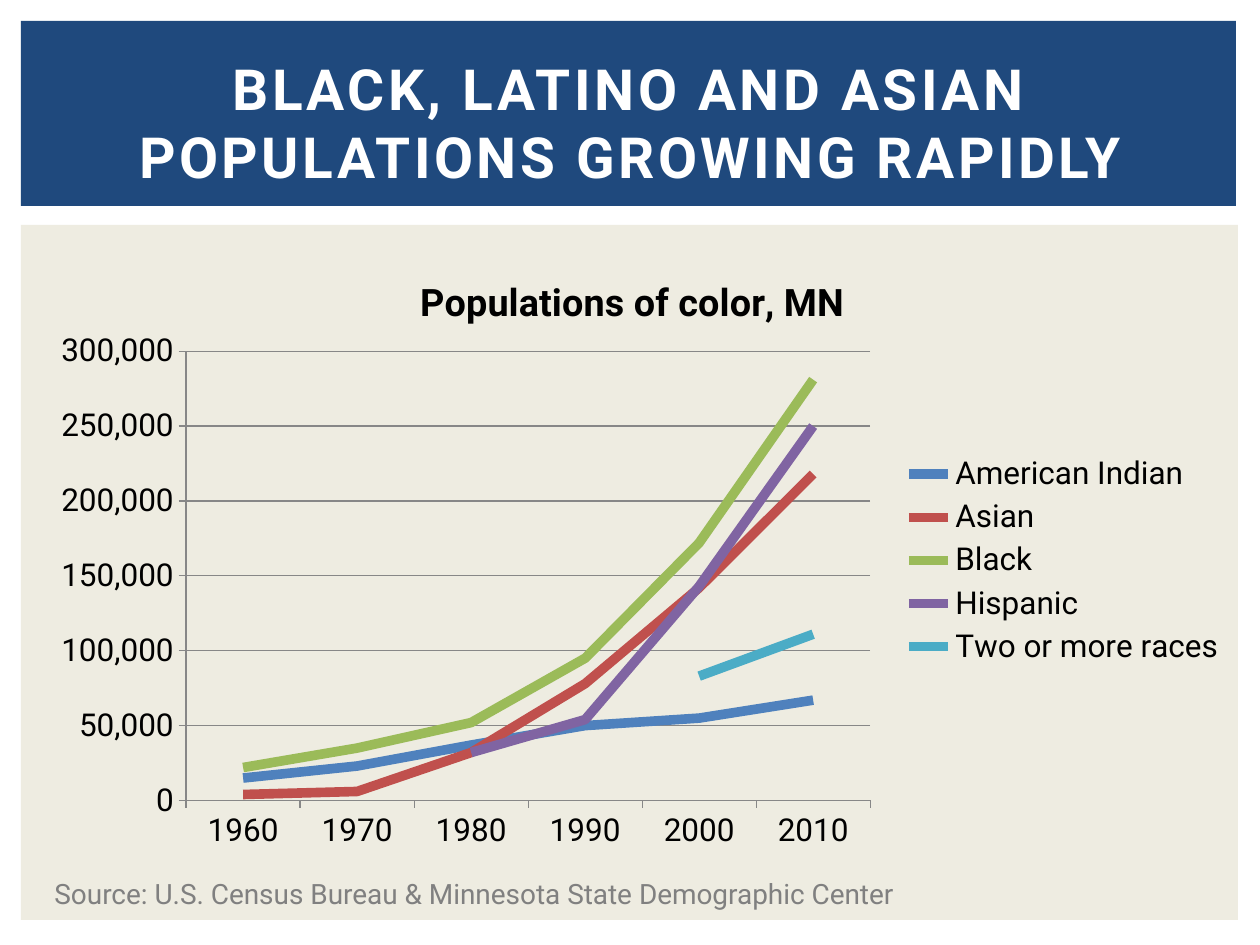
from lxml.etree import SubElement
from pptx import Presentation
from pptx.chart.data import CategoryChartData
from pptx.dml.color import RGBColor
from pptx.enum.chart import XL_CHART_TYPE, XL_LEGEND_POSITION, XL_MARKER_STYLE, XL_TICK_MARK
from pptx.enum.shapes import MSO_SHAPE
from pptx.enum.text import MSO_ANCHOR, PP_ALIGN
from pptx.oxml.ns import qn
from pptx.util import Emu, Pt

PX = 914400 / 126
FONT = "Roboto"
YEARS = ["1960", "1970", "1980", "1990", "2000", "2010"]
POPULATIONS = [
    ("American Indian", "4F81BD", [15000, 23000, 37000, 50000, 55000, 67000]),
    ("Asian", "C0504D", [4000, 6000, 32000, 78000, 142000, 218000]),
    ("Black", "9BBB59", [22000, 35000, 52000, 95000, 172000, 281000]),
    ("Hispanic", "8064A2", [None, None, 32000, 54000, 143000, 250000]),
    ("Two or more races", "4BACC6", [None, None, None, None, 83000, 111000]),
]
PLOT_LAYOUT = {"x": 0.132, "y": 0.162, "w": 0.564, "h": 0.726}


def px(*lengths):
    return [Emu(round(length * PX)) for length in lengths]


def color(hex_string):
    return RGBColor.from_string(hex_string)


def style_font(font, size, hex_string, bold=False):
    font.name = FONT
    font.size = Pt(size)
    font.bold = bold
    font.color.rgb = color(hex_string)


def add_panel(page, box, fill):
    panel = page.shapes.add_shape(MSO_SHAPE.RECTANGLE, *px(*box))
    panel.shadow.inherit = False
    panel.fill.solid()
    panel.fill.fore_color.rgb = color(fill)
    panel.line.fill.background()


def add_header(page, box):
    left, top, width, height = box
    add_panel(page, box, "1F497D")
    title = page.shapes.title
    title.left, title.top, title.width, title.height = px(
        left + 32, top + 28, width - 60, height - 40)
    frame = title.text_frame
    frame.text = "BLACK, LATINO AND ASIAN POPULATIONS GROWING RAPIDLY"
    frame.word_wrap = True
    frame.vertical_anchor = MSO_ANCHOR.MIDDLE
    para = frame.paragraphs[0]
    para.alignment = PP_ALIGN.CENTER
    span = para.runs[0]
    style_font(span.font, 32.4, "FFFFFF", bold=True)
    span._r.get_or_add_rPr().set("spc", "200")
    # Bring the title in front of its band
    title.element.getparent().append(title.element)


def set_plot_layout(chart):
    plot_area = chart._chartSpace.chart.plotArea
    layout = plot_area.find(qn("c:layout"))
    if layout is None:
        layout = SubElement(plot_area, qn("c:layout"))
        plot_area.insert(0, layout)
    manual = SubElement(layout, qn("c:manualLayout"))
    settings = [("layoutTarget", "inner"), ("xMode", "edge"), ("yMode", "edge")]
    for tag, value in settings + list(PLOT_LAYOUT.items()):
        SubElement(manual, qn(f"c:{tag}")).set("val", str(value))


def add_population_chart(page, box):
    data = CategoryChartData(number_format="#,##0")
    data.categories = YEARS
    for name, _, values in POPULATIONS:
        data.add_series(name, values)
    chart = page.shapes.add_chart(XL_CHART_TYPE.LINE, *px(*box), data).chart
    style_font(chart.font, 18, "000000")

    # Title and legend
    chart.has_title = True
    frame = chart.chart_title.text_frame
    frame.text = "Populations of color, MN"
    style_font(frame.paragraphs[0].runs[0].font, 21.6, "000000", bold=True)
    chart.chart_title.include_in_layout = False
    chart.has_legend = True
    chart.legend.position = XL_LEGEND_POSITION.RIGHT
    chart.legend.include_in_layout = False

    # Axes and gridlines
    values_axis = chart.value_axis
    values_axis.minimum_scale, values_axis.maximum_scale = 0, 300000
    values_axis.major_unit = 50000
    values_axis.has_major_gridlines = True
    values_axis.tick_labels.number_format = "#,##0"
    values_axis.tick_labels.number_format_is_linked = False
    for axis in (chart.category_axis, values_axis):
        axis.major_tick_mark = XL_TICK_MARK.OUTSIDE
    for part in (chart.category_axis, values_axis, values_axis.major_gridlines):
        part.format.line.color.rgb = color("878787")
        part.format.line.width = Pt(0.75)

    # Series lines
    chart.plots[0].vary_by_categories = False
    for series, (_, line_color, _) in zip(chart.plots[0].series, POPULATIONS):
        series.smooth = False
        series.marker.style = XL_MARKER_STYLE.NONE
        series.format.line.color.rgb = color(line_color)
        series.format.line.width = Pt(5.5)
    set_plot_layout(chart)


def add_source(page, box):
    frame = page.shapes.add_textbox(*px(*box)).text_frame
    frame.word_wrap = True
    frame.text = "Source: U.S. Census Bureau & Minnesota State Demographic Center"
    style_font(frame.paragraphs[0].runs[0].font, 16, "808080")


def add_body(page, box):
    left, top, width, height = box
    add_panel(page, box, "EEECE1")
    add_source(page, (left + 21, top + height - 50, 950, 47))
    add_population_chart(page, (left + 5, top + 26, width - 4, 619))


def main():
    deck = Presentation()
    deck.slide_width, deck.slide_height = px(1260, 945)
    page = deck.slides.add_slide(deck.slide_layouts[5])
    add_body(page, (21, 225, 1217, 695))
    add_header(page, (21, 21, 1215, 185))
    deck.save("out.pptx")


if __name__ == "__main__":
    main()
